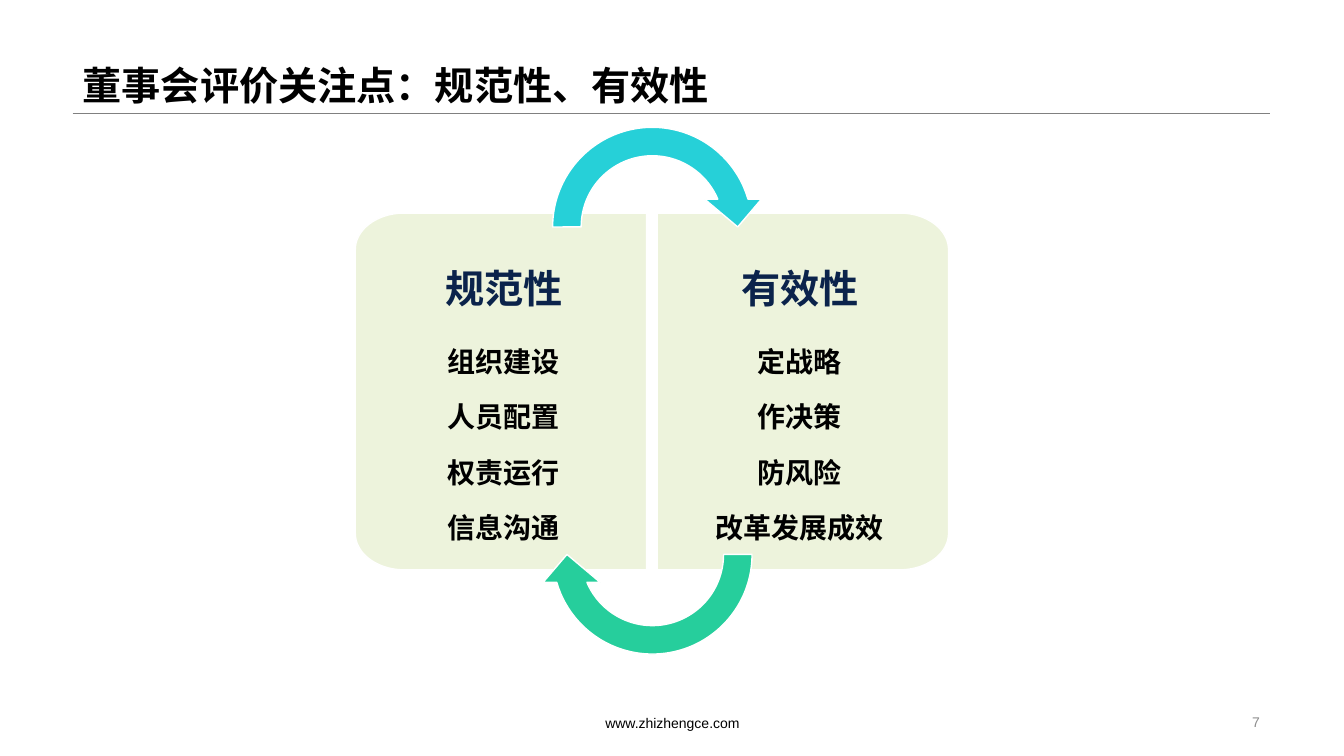
from dataclasses import dataclass
from math import cos, pi, sin

from lxml.etree import SubElement
from pptx import Presentation
from pptx.dml.color import RGBColor
from pptx.enum.shapes import MSO_CONNECTOR, MSO_SHAPE
from pptx.enum.text import MSO_ANCHOR, PP_ALIGN
from pptx.oxml.ns import qn
from pptx.util import Cm, Pt

TITLE = "董事会评价关注点：规范性、有效性"
PANELS = [
    ("规范性", ["组织建设", "人员配置", "权责运行", "信息沟通"]),
    ("有效性", ["定战略", "作决策", "防风险", "改革发展成效"]),
]
FOOTER = "www.zhizhengce.com"
PAGE_NUMBER = "7"


@dataclass(frozen=True)
class Theme:
    title_font: str = "Noto Sans CJK SC"
    body_font: str = "Arial"
    heading_size: int = 28
    item_size: int = 20
    footer_size: int = 10
    black: str = "000000"
    navy: str = "0B234B"
    grey: str = "8C8C8C"
    rule: str = "808080"
    panel: str = "EDF3DC"
    white: str = "FFFFFF"
    arrows: tuple = ("26D0D8", "26CE9C")


THEME = Theme()

# Lengths in centimetres
MARGIN, CONTENT_WIDTH, RULE_TOP = 1.83, 30.17, 2.85
CENTRE_X = 16.43
PANEL_TOP, PANEL_WIDTH, PANEL_HEIGHT, PANEL_GAP = 5.37, 7.34, 8.99, 0.27
CORNER_X, CORNER_Y, CORNER_STEPS = 1.23, 0.92, 24
INNER_INSET, OUTER_INSET, END_INSET = 0.38, 0.53, 0.69
ARROW_SIZE = 5.74
ARROW_TOPS = (2.85, 11.1)
ARROW_ADJUSTMENTS = (0.125, 11.423, 204.577, 108, 0.125)


def add_span(para, text, size, color, font, bold=False):
    span = para.add_run()
    span.text = text
    span.font.size = Pt(size)
    span.font.bold = bold
    span.font.name = font
    span.font.color.rgb = RGBColor.from_string(color)
    SubElement(span.font._element, qn("a:ea"), typeface=font)


def paint(shape, color):
    shape.shadow.inherit = False
    shape.fill.solid()
    shape.fill.fore_color.rgb = RGBColor.from_string(color)
    shape.line.color.rgb = RGBColor.from_string(THEME.white)
    shape.line.width = Pt(1)


def add_title(page):
    title = page.shapes.title
    title.left, title.top = Cm(MARGIN), Cm(0.36)
    title.width, title.height = Cm(CONTENT_WIDTH), Cm(2.49)
    title.text_frame.vertical_anchor = MSO_ANCHOR.BOTTOM
    para = title.text_frame.paragraphs[0]
    para.alignment = PP_ALIGN.LEFT
    add_span(para, TITLE, THEME.heading_size, THEME.black, THEME.title_font, True)

    rule = page.shapes.add_connector(
        MSO_CONNECTOR.STRAIGHT, Cm(MARGIN), Cm(RULE_TOP),
        Cm(MARGIN + CONTENT_WIDTH), Cm(RULE_TOP))
    rule.line.color.rgb = RGBColor.from_string(THEME.rule)
    rule.line.width = Pt(0.75)
    SubElement(rule._element.spPr, qn("a:effectLst"))


def add_footer_text(page, text, left, top, width, height, alignment, color):
    box = page.shapes.add_textbox(Cm(left), Cm(top), Cm(width), Cm(height))
    box.text_frame.word_wrap = True
    box.text_frame.vertical_anchor = MSO_ANCHOR.MIDDLE
    para = box.text_frame.paragraphs[0]
    para.alignment = alignment
    add_span(para, text, THEME.footer_size, color, THEME.body_font)


def panel_outline(side):
    """Points of a panel rounded on its outer side; side is -1 left, 1 right."""
    inner = CENTRE_X + side * PANEL_GAP / 2
    corner_x = inner + side * (PANEL_WIDTH - CORNER_X)
    bottom = PANEL_TOP + PANEL_HEIGHT
    angles = [pi / 2 * step / CORNER_STEPS for step in range(CORNER_STEPS + 1)]
    upper = [(corner_x + side * CORNER_X * sin(angle),
              PANEL_TOP + CORNER_Y * (1 - cos(angle))) for angle in angles]
    lower = [(x, PANEL_TOP + bottom - y) for x, y in reversed(upper)]
    return [(inner, PANEL_TOP), *upper, *lower, (inner, bottom)]


def add_panel(page, side, heading, items):
    start, *rest = [(Cm(x), Cm(y)) for x, y in panel_outline(side)]
    builder = page.shapes.build_freeform(*start)
    builder.add_line_segments(rest, close=True)
    panel = builder.convert_to_shape()
    paint(panel, THEME.panel)

    frame = panel.text_frame
    frame.word_wrap = True
    frame.vertical_anchor = MSO_ANCHOR.TOP
    frame.margin_top = frame.margin_bottom = Cm(END_INSET)
    frame.margin_left = Cm(OUTER_INSET if side < 0 else INNER_INSET)
    frame.margin_right = Cm(INNER_INSET if side < 0 else OUTER_INSET)
    lines = [(heading, THEME.heading_size, THEME.navy, 0.35)]
    lines += [(item, THEME.item_size, THEME.black, 0.15) for item in items]
    for index, (text, size, color, space) in enumerate(lines):
        para = frame.add_paragraph() if index else frame.paragraphs[0]
        para.alignment = PP_ALIGN.CENTER
        para.line_spacing = 1.5
        para.space_after = Pt(round(size * space * 1.2, 1))
        add_span(para, text, size, color, THEME.body_font, True)


def add_arrow(page, top, color, rotation):
    arrow = page.shapes.add_shape(
        MSO_SHAPE.CIRCULAR_ARROW, Cm(CENTRE_X + 0.01 - ARROW_SIZE / 2), Cm(top),
        Cm(ARROW_SIZE), Cm(ARROW_SIZE))
    for index, value in enumerate(ARROW_ADJUSTMENTS):
        arrow.adjustments[index] = value
    arrow.rotation = rotation
    paint(arrow, color)


def main():
    deck = Presentation()
    deck.slide_width, deck.slide_height = Cm(33.87), Cm(19.05)
    page = deck.slides.add_slide(deck.slide_layouts[5])
    add_title(page)
    add_footer_text(page, FOOTER, 12.32, 17.86, 9.25, 0.69, PP_ALIGN.CENTER, THEME.black)
    add_footer_text(page, PAGE_NUMBER, 21.59, 17.81, 10.41, 0.76, PP_ALIGN.RIGHT, THEME.grey)
    for side, (heading, items) in zip((-1, 1), PANELS):
        add_panel(page, side, heading, items)
    for top, color, rotation in zip(ARROW_TOPS, THEME.arrows, (0, 180)):
        add_arrow(page, top, color, rotation)
    deck.save("out.pptx")


if __name__ == "__main__":
    main()
